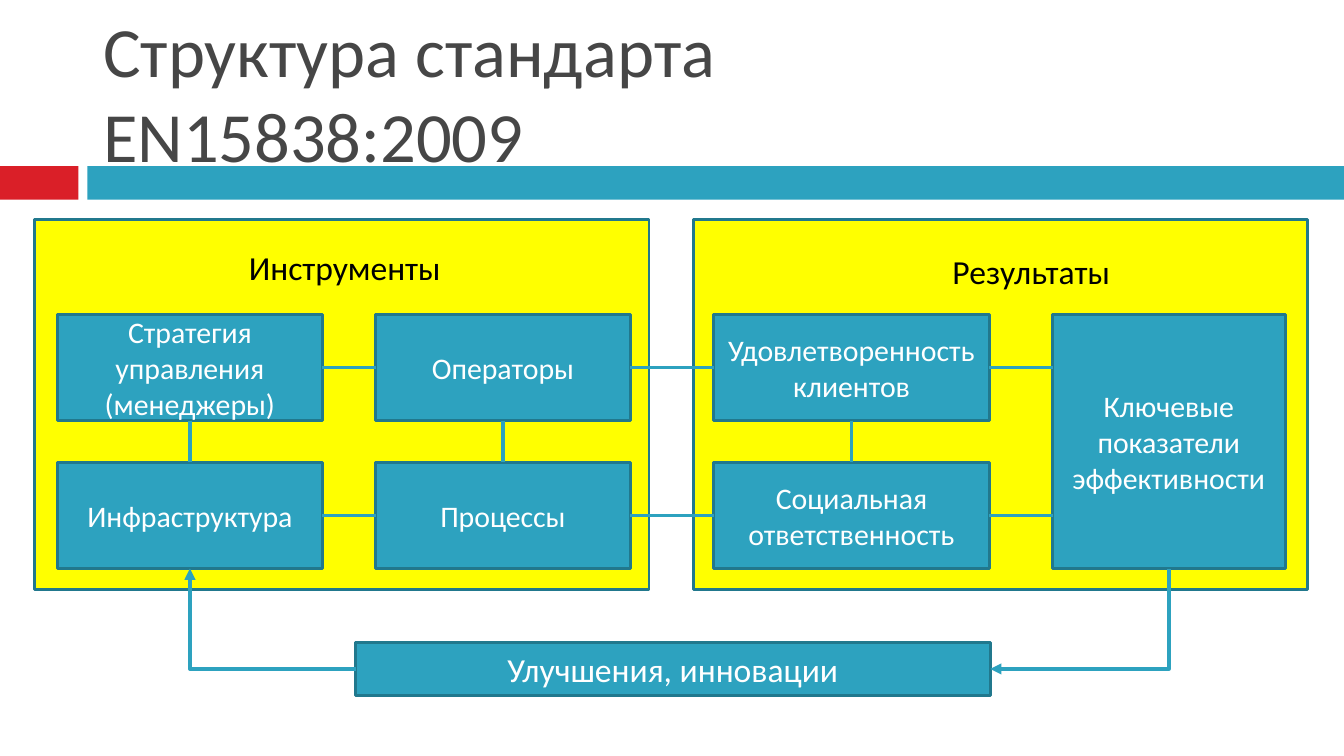
from lxml.etree import SubElement
from pptx import Presentation
from pptx.dml.color import RGBColor
from pptx.enum.shapes import MSO_CONNECTOR as CONN, MSO_SHAPE as SHAPE
from pptx.enum.text import MSO_ANCHOR as ANCHOR, PP_ALIGN as ALIGN
from pptx.oxml.ns import qn
from pptx.util import Pt

RED = RGBColor(0xDA, 0x1F, 0x28)
TEAL = RGBColor(0x2D, 0xA2, 0xBF)
DARK_TEAL = RGBColor(0x21, 0x78, 0x8D)
YELLOW = RGBColor(0xFF, 0xFF, 0x00)
GREY = RGBColor(0x46, 0x46, 0x46)
BLACK = RGBColor(0, 0, 0)
WHITE = RGBColor(0xFF, 0xFF, 0xFF)

ROW_TOP, ROW_PITCH, CELL_H = 51.1, 79.3, 56.8


def write(sp, text, size, color, align=ALIGN.CENTER, anchor=ANCHOR.MIDDLE):
    tf = sp.text_frame
    tf.word_wrap = True
    tf.vertical_anchor = anchor
    p = tf.paragraphs[0]
    p.alignment = align
    r = p.add_run()
    r.text = text
    for name, value in {"name": "Calibri", "size": Pt(size)}.items():
        setattr(r.font, name, value)
    r.font.color.rgb = color


def add_rect(slide, box, fill, line=None):
    sp = slide.shapes.add_shape(SHAPE.RECTANGLE, *map(Pt, box))
    sp.shadow.inherit = False
    sp.fill.solid()
    sp.fill.fore_color.rgb = fill
    if line is None:
        sp.line.fill.background()
    else:
        sp.line.color.rgb = line
        sp.line.width = Pt(1.5)
    return sp


def add_label(slide, box, text, size, color, **layout):
    write(slide.shapes.add_textbox(*map(Pt, box)), text, size, color, **layout)


def add_block(slide, box, text, size=16):
    sp = add_rect(slide, box, TEAL, DARK_TEAL)
    write(sp, text, size, WHITE)
    return sp


def add_line(slide, start, end, kind=CONN.STRAIGHT):
    line = slide.shapes.add_connector(kind, *start, *end)
    line.line.color.rgb = TEAL
    line.line.width = Pt(2)
    SubElement(line._element.spPr, qn("a:effectLst"))
    return line


def link_across(slide, a, b):
    """Join two blocks side by side, level with the middle of a."""
    y = a.top + a.height // 2
    add_line(slide, (a.left + a.width, y), (b.left, y))


def link_down(slide, a, b):
    x = a.left + a.width // 2
    add_line(slide, (x, a.top + a.height), (x, b.top))


def add_feedback_arrow(slide, bar, target):
    """Run level from the nearer end of the bar, then up to the target's base."""
    x = target.left + target.width // 2
    from_left = x < bar.left
    start = (bar.left if from_left else bar.left + bar.width,
             bar.top + bar.height // 2)
    line = add_line(slide, start, (x, target.top + target.height), CONN.ELBOW)
    line._element.spPr.find(qn("a:prstGeom")).set("prst", "bentConnector2")
    # The flow enters the bar on the right and leaves it on the left.
    end = "a:tailEnd" if from_left else "a:headEnd"
    SubElement(line.line._get_or_add_ln(), qn(end), type="triangle")


def add_header(slide, box):
    left, top, width, height = box
    band_y = top + height - 18
    add_rect(slide, (left, band_y, 42, 18), RED)
    add_rect(slide, (left + 46.8, band_y, width - 46.8, 18), TEAL)
    add_label(slide, (left + 48.2, top + 9.4, 535.7, 79.2),
              "Структура стандарта EN15838:2009", 37.8, GREY, align=ALIGN.LEFT)


def add_panel(slide, box, heading, heading_at, cells):
    """Draw a panel; cells hold (x, width, row, rows spanned, text)."""
    left, top = box[:2]
    add_rect(slide, box, YELLOW, DARK_TEAL)
    dx, dy = heading_at
    add_label(slide, (left + dx, top + dy, 147.6, 29), heading, 18, BLACK,
              anchor=ANCHOR.TOP)
    return [
        add_block(slide, (left + x, top + ROW_TOP + row * ROW_PITCH, width,
                          CELL_H + (span - 1) * ROW_PITCH), text)
        for x, width, row, span, text in cells
    ]


def add_model(slide, box):
    left, top, width, height = box
    panel_w, panel_h = 329, 198.6
    strategy, operators, infrastructure, processes = add_panel(
        slide, (left, top, panel_w, panel_h), "Инструменты", (92.2, 11.5), [
            (12.2, 141.8, 0, 1, "Стратегия управления (менеджеры)"),
            (182.6, 136.4, 0, 1, "Операторы"),
            (12.2, 141.8, 1, 1, "Инфраструктура"),
            (182.6, 136.4, 1, 1, "Процессы"),
        ])
    customers, society, results = add_panel(
        slide, (left + width - panel_w, top, panel_w, panel_h),
        "Результаты", (107.3, 13.7), [
            (11, 147.6, 0, 1, "Удовлетворенность клиентов"),
            (11, 147.6, 1, 1, "Социальная ответственность"),
            (192.5, 124.6, 0, 2, "Ключевые показатели эффективности"),
        ])

    for a, b in [(strategy, operators), (operators, customers),
                 (customers, results), (infrastructure, processes),
                 (processes, society), (society, results)]:
        link_across(slide, a, b)
    for a, b in [(strategy, infrastructure), (operators, processes),
                 (customers, society)]:
        link_down(slide, a, b)

    bar = add_block(slide, (left + 171.8, top + height - 28.4, 340, 28.4),
                    "Улучшения, инновации", 18)
    for target in (results, infrastructure):
        add_feedback_arrow(slide, bar, target)


def main():
    prs = Presentation()
    prs.slide_width, prs.slide_height = Pt(720), Pt(405)
    slide = prs.slides.add_slide(prs.slide_layouts[6])
    add_header(slide, (0, 0, 720, 107))
    add_model(slide, (18.7, 117.4, 681.7, 255.2))
    prs.save("out.pptx")


if __name__ == "__main__":
    main()
